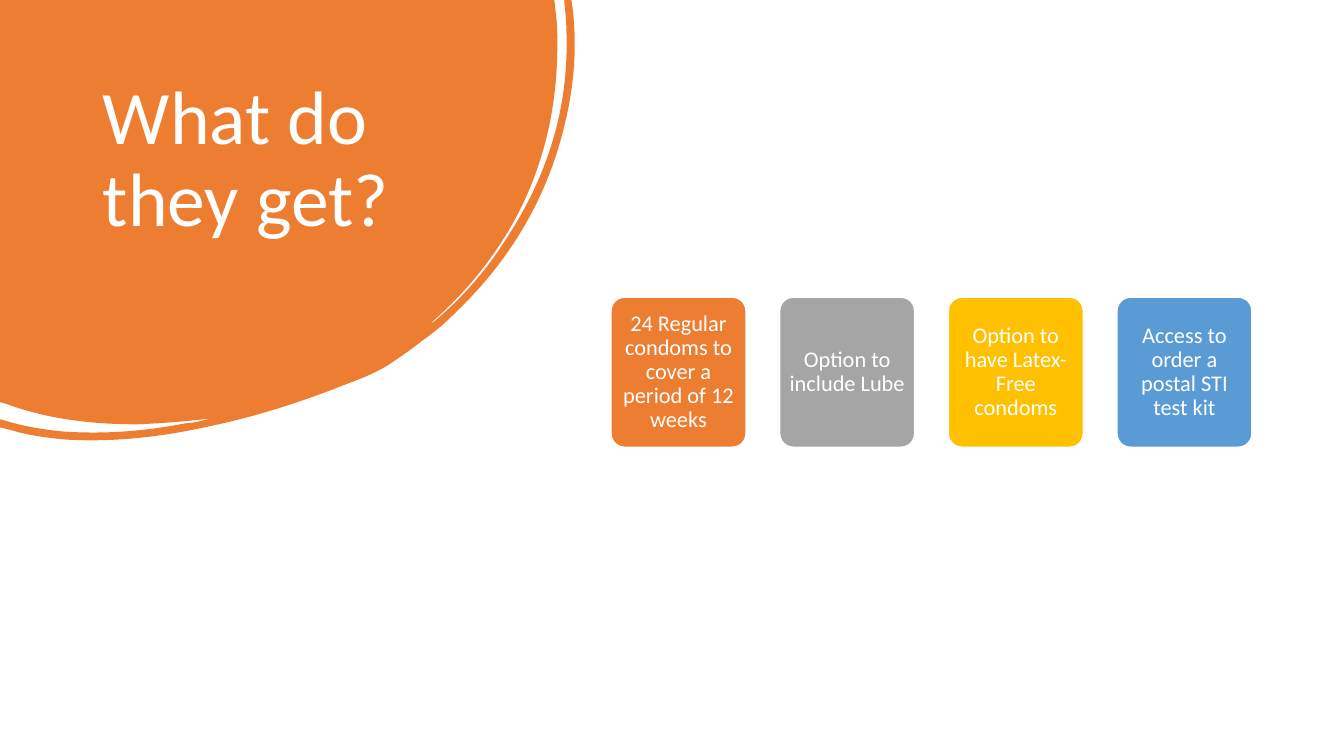
from lxml import etree
from pptx import Presentation
from pptx.dml.color import RGBColor
from pptx.enum.shapes import MSO_SHAPE
from pptx.enum.text import MSO_ANCHOR, MSO_AUTO_SIZE, PP_ALIGN
from pptx.oxml.ns import qn
from pptx.util import Cm, Pt

ROUND = MSO_SHAPE.ROUNDED_RECTANGLE
TOP, MIDDLE = MSO_ANCHOR.TOP, MSO_ANCHOR.MIDDLE
LEFT, CENTER = PP_ALIGN.LEFT, PP_ALIGN.CENTER
NO_FIT = MSO_AUTO_SIZE.NONE

WHITE = RGBColor(0xFF, 0xFF, 0xFF)
ORANGE = RGBColor(0xED, 0x7D, 0x31)
GREY = RGBColor(0xA5, 0xA5, 0xA5)
GOLD = RGBColor(0xFF, 0xC0, 0x00)
BLUE = RGBColor(0x5B, 0x9B, 0xD5)

INCH = 2.54

# Outline in inches: pairs are straight lines, sixes are Bezier curves.
OUTLINE = [
    (0, 0), (5.5, 0), (5.52, 0.17),
    (5.53, 0.26, 5.53, 0.36, 5.53, 0.45),
    (5.53, 1.01, 5.42, 1.54, 5.18, 2.04),
    (4.96, 2.49, 4.65, 2.88, 4.27, 3.21),
    (4.29, 3.21, 4.3, 3.19, 4.32, 3.18),
    (4.59, 2.95, 4.82, 2.69, 5.01, 2.39),
    (5.43, 1.76, 5.65, 1.07, 5.62, 0.3),
    (5.62, 0.21, 5.61, 0.12, 5.6, 0.03),
    (5.6, 0), (5.67, 0), (5.68, 0.07),
    (5.74, 0.54, 5.68, 1.02, 5.53, 1.5),
    (5.33, 2.14, 4.97, 2.68, 4.48, 3.14),
    (4.39, 3.23, 4.29, 3.31, 4.19, 3.38),
    (4.09, 3.46, 3.99, 3.53, 3.87, 3.61),
    (3.75, 3.69, 3.6, 3.75, 3.44, 3.81),
    (2.99, 3.99, 2.52, 4.14, 2.03, 4.24),
    (1.57, 4.34, 1.1, 4.39, 0.63, 4.36),
    (0.45, 4.34, 0.28, 4.32, 0.12, 4.27),
    (0, 4.24), (0, 4.16), (0.04, 4.17),
    (0.23, 4.23, 0.42, 4.26, 0.61, 4.28),
    (1.03, 4.31, 1.43, 4.28, 1.84, 4.2),
    (1.89, 4.2, 1.93, 4.19, 1.98, 4.18),
    (2.02, 4.17, 2.06, 4.16, 2.1, 4.15),
    (1.86, 4.18, 1.61, 4.2, 1.36, 4.21),
    (0.92, 4.21, 0.48, 4.16, 0.07, 4.01),
    (0, 3.99),
]

CARDS = [
    ("24 Regular condoms to cover a period of 12 weeks", ORANGE),
    ("Option to include Lube", GREY),
    ("Option to have Latex-Free condoms", GOLD),
    ("Access to order a postal STI test kit", BLUE),
]

BLOB_SIZE = {"width": Cm(14.5), "height": Cm(11.1)}
TITLE_BOX = {"left": Cm(2.34), "top": Cm(1.88),
             "width": Cm(8.94), "height": Cm(5.64)}
TITLE_FRAME = {"vertical_anchor": TOP, "word_wrap": True, "auto_size": NO_FIT}
CARD_FRAME = {"vertical_anchor": MIDDLE, "word_wrap": True,
              "margin_left": Cm(0.08), "margin_right": Cm(0.08),
              "margin_top": Cm(0.05), "margin_bottom": Cm(0.05)}


def set_all(item, values):
    for name, value in values.items():
        setattr(item, name, value)


def write(shape, text, size, align, frame):
    body = shape.text_frame
    set_all(body, frame)
    para = body.paragraphs[0]
    set_all(para, {"alignment": align, "line_spacing": 0.9})
    run = para.add_run()
    run.text = text
    set_all(run.font, {"name": "Calibri", "size": Pt(size)})
    run.font.color.rgb = WHITE


def paint(shape, color):
    shape.shadow.inherit = False
    shape.fill.solid()
    shape.fill.fore_color.rgb = color


def bend(blob, parts):
    """Turn the straight segments that have control points into curves."""
    track = blob._element.find(".//" + qn("a:path"))
    track.set("w", str(BLOB_SIZE["width"]))
    track.set("h", str(BLOB_SIZE["height"]))
    for line, part in zip(track.findall(qn("a:lnTo")), parts):
        if len(part) == 2:
            continue
        curve = etree.Element(qn("a:cubicBezTo"))
        for x, y in zip(part[::2], part[1::2]):
            etree.SubElement(curve, qn("a:pt"), x=str(x), y=str(y))
        track.replace(line, curve)


def add_blob(slide):
    parts = [[Cm(value * INCH) for value in part] for part in OUTLINE]
    pen = slide.shapes.build_freeform(*parts[0])
    pen.add_line_segments([part[-2:] for part in parts[1:]], close=True)
    blob = pen.convert_to_shape()
    bend(blob, parts[1:])
    set_all(blob, BLOB_SIZE)
    paint(blob, ORANGE)
    blob.line.fill.background()
    return blob


def add_title(slide, blob):
    title = slide.shapes.title
    set_all(title, TITLE_BOX)
    write(title, "What do they get?", 54, LEFT, TITLE_FRAME)
    blob._element.addnext(title._element)


def add_card(slide, left, text, color):
    card = slide.shapes.add_shape(ROUND, left, Cm(7.49), Cm(3.4), Cm(3.78))
    card.adjustments[0] = 0.1
    paint(card, color)
    card.line.color.rgb = WHITE
    card.line.width = Pt(1)
    write(card, text, 16, CENTER, CARD_FRAME)


def main():
    deck = Presentation()
    set_all(deck, {"slide_width": Cm(33.87), "slide_height": Cm(19.05)})
    slide = deck.slides.add_slide(deck.slide_layouts[5])
    add_title(slide, add_blob(slide))
    for index, (text, color) in enumerate(CARDS):
        add_card(slide, Cm(15.4 + 4.25 * index), text, color)
    deck.save("out.pptx")


if __name__ == "__main__":
    main()
